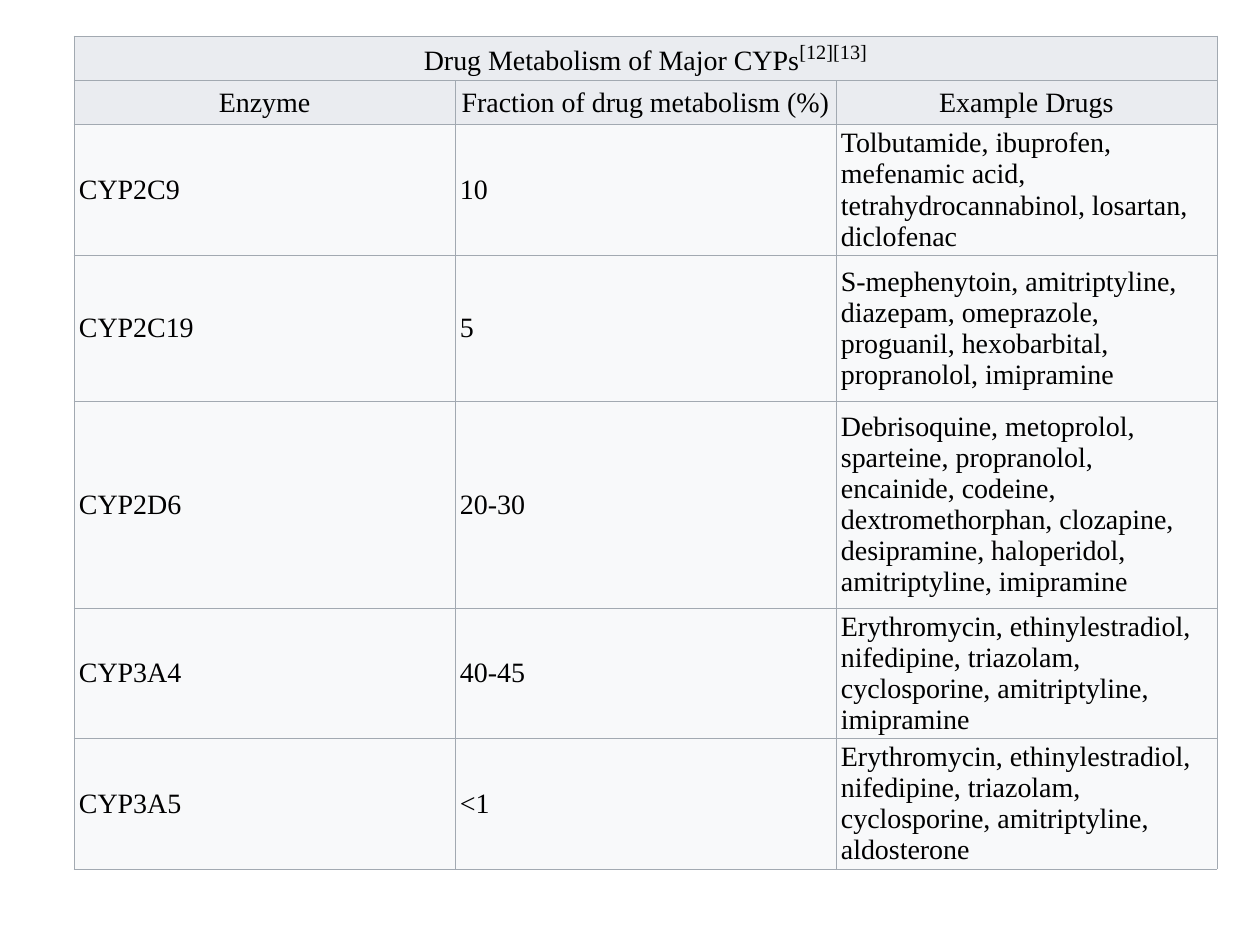
from lxml import etree
from pptx import Presentation
from pptx import util as u
from pptx.dml.color import RGBColor
from pptx.enum import text
from pptx.oxml.ns import qn

PX = 914400 / 126
COLORS = {"ink": "000000", "header": "EAECF0", "body": "F8F9FA", "border": "A2A9B1"}
COLUMN_WIDTH = 381
ROW_HEIGHTS = [24, 44, 105, 146, 207, 125, 125]
HEADINGS = ["Enzyme", "Fraction of drug metabolism (%)", "Example Drugs"]
ENZYMES = [
    ("CYP2C9", "10", "Tolbutamide, ibuprofen, mefenamic acid, "
     "tetrahydrocannabinol, losartan, diclofenac"),
    ("CYP2C19", "5", "S-mephenytoin, amitriptyline, diazepam, omeprazole, "
     "proguanil, hexobarbital, propranolol, imipramine"),
    ("CYP2D6", "20-30", "Debrisoquine, metoprolol, sparteine, propranolol, "
     "encainide, codeine, dextromethorphan, clozapine, desipramine, "
     "haloperidol, amitriptyline, imipramine"),
    ("CYP3A4", "40-45", "Erythromycin, ethinylestradiol, nifedipine, triazolam, "
     "cyclosporine, amitriptyline, imipramine"),
    ("CYP3A5", "<1", "Erythromycin, ethinylestradiol, nifedipine, triazolam, "
     "cyclosporine, amitriptyline, aldosterone"),
]


def px(length):
    return u.Emu(round(length * PX))


def color(name):
    return RGBColor.from_string(COLORS[name])


def add_text(para, wording, size=16, raised=0, align=text.PP_ALIGN.LEFT):
    """Append a run; raised is the superscript offset in percent."""
    para.alignment = align
    span = para.add_run()
    span.text = wording
    span.font.name = "Times New Roman"
    span.font.size = u.Pt(size)
    span.font.color.rgb = color("ink")
    if raised:
        span.font._element.set("baseline", str(raised * 1000))


def add_borders(cell):
    properties = cell._tc.get_or_add_tcPr()
    for side in ("lnL", "lnR", "lnT", "lnB"):
        line = etree.SubElement(properties, qn(f"a:{side}"), w=str(u.Pt(0.6)))
        fill = etree.SubElement(line, qn("a:solidFill"))
        etree.SubElement(fill, qn("a:srgbClr"), val=COLORS["border"])


def style_cell(cell, fill):
    add_borders(cell)
    cell.fill.solid()
    cell.fill.fore_color.rgb = color(fill)
    cell.vertical_anchor = text.MSO_ANCHOR.MIDDLE
    cell.margin_left = cell.margin_right = px(5)
    cell.margin_top = cell.margin_bottom = px(3)


def add_enzyme_table(page):
    frame = page.shapes.add_table(len(ROW_HEIGHTS), len(HEADINGS), px(74), px(36),
                                  px(COLUMN_WIDTH * len(HEADINGS)), px(892))
    table = frame.table
    table.first_row = table.horz_banding = False
    for column in table.columns:
        column.width = px(COLUMN_WIDTH)
    for row_index, (row, height) in enumerate(zip(table.rows, ROW_HEIGHTS)):
        row.height = px(height)
        for cell in row.cells:
            style_cell(cell, "header" if row_index < 2 else "body")
    frame.height = px(892)

    center = text.PP_ALIGN.CENTER
    caption = table.cell(0, 0)
    caption.merge(table.cell(0, len(HEADINGS) - 1))
    para = caption.text_frame.paragraphs[0]
    add_text(para, "Drug Metabolism of Major CYPs", align=center)
    add_text(para, "[12][13]", size=20, raised=30, align=center)

    for row_index, entries in enumerate([HEADINGS, *ENZYMES], start=1):
        align = center if row_index == 1 else text.PP_ALIGN.LEFT
        for column_index, wording in enumerate(entries):
            para = table.cell(row_index, column_index).text_frame.paragraphs[0]
            add_text(para, wording, align=align)


def main():
    deck = Presentation()
    deck.slide_width, deck.slide_height = px(1260), px(945)
    page = deck.slides.add_slide(deck.slide_layouts[6])
    add_enzyme_table(page)
    deck.save("out.pptx")


if __name__ == "__main__":
    main()
